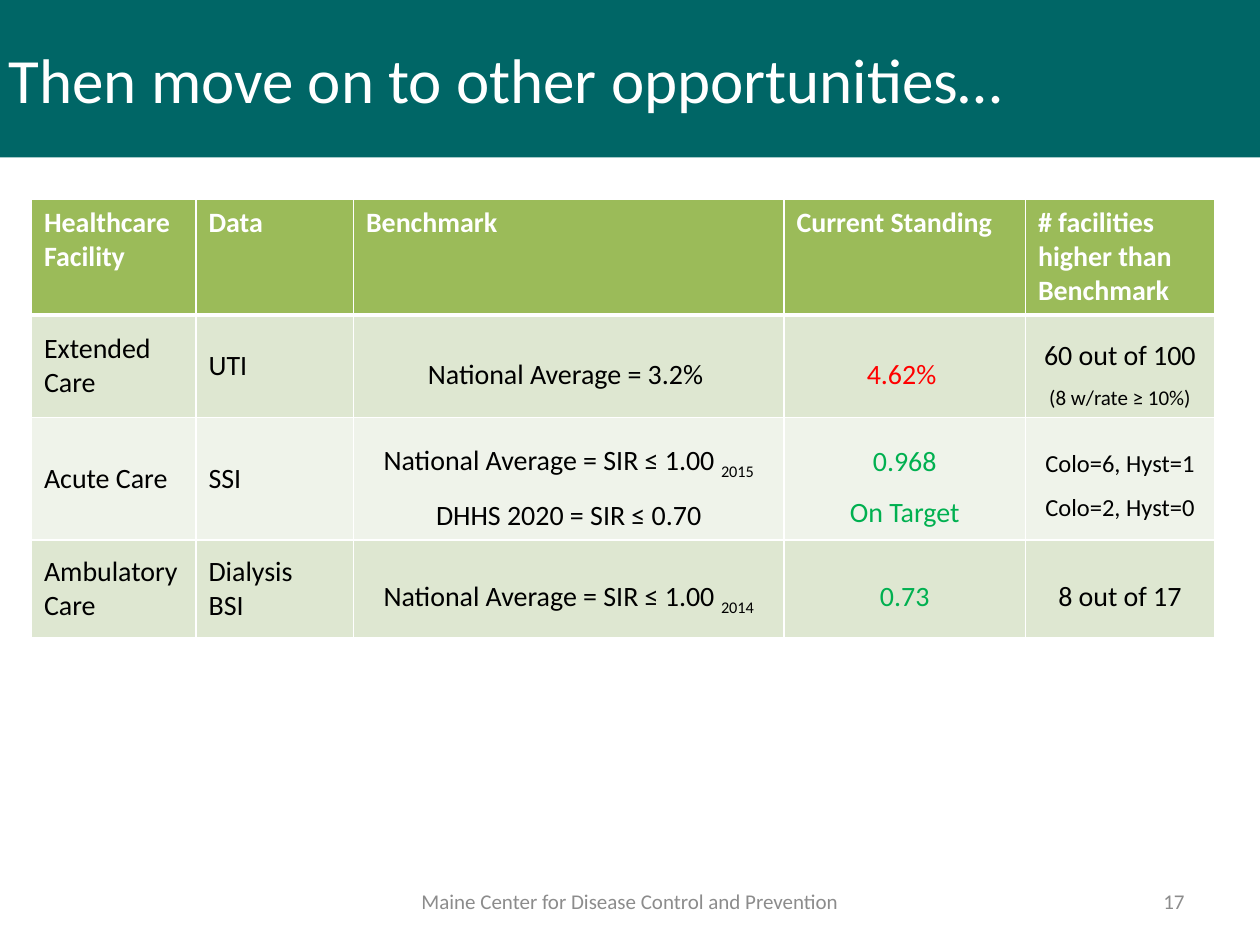
"""Build the slide on further opportunities, with its benchmark table."""
from dataclasses import dataclass

from lxml.etree import SubElement
from pptx import Presentation
from pptx.dml.color import RGBColor
from pptx.enum.shapes import MSO_SHAPE
from pptx.enum.text import MSO_ANCHOR, PP_ALIGN
from pptx.oxml.ns import qn
from pptx.util import Pt


@dataclass(frozen=True)
class Theme:
    font: str = "Calibri"
    teal: str = "006666"
    green: str = "9BBB59"
    bands: tuple = ("DEE7D1", "EFF3EA")
    white: str = "FFFFFF"
    black: str = "000000"
    gray: str = "8C8C8C"
    bad: str = "FF0000"
    good: str = "00B050"
    title: int = 36
    body: int = 16
    small: int = 14
    note: int = 12


@dataclass
class Run:
    text: str
    color: str = Theme.black
    size: int = Theme.body
    bold: bool = False
    sub: bool = False


class Deck:
    def __init__(self, theme, slide):
        self.theme = theme
        self.slide = slide

    def prose(self, frame, paras, align=PP_ALIGN.LEFT, space=1.0):
        frame.word_wrap = True
        for num, runs in enumerate(paras):
            para = frame.add_paragraph() if num else frame.paragraphs[0]
            para.alignment = align
            para.line_spacing = space
            for item in runs:
                run = para.add_run()
                run.text = item.text
                font = run.font
                font.name = self.theme.font
                font.size = Pt(item.size)
                font.bold = item.bold
                font.color.rgb = RGBColor.from_string(item.color)
                if item.sub:
                    run._r.get_or_add_rPr().set("baseline", "-25000")

    def banner(self, left, top, width, height, text):
        box = self.slide.shapes.add_shape(
            MSO_SHAPE.RECTANGLE, Pt(left), Pt(top), Pt(width), Pt(height))
        box.shadow.inherit = False
        box.fill.solid()
        box.fill.fore_color.rgb = RGBColor.from_string(self.theme.teal)
        box.line.fill.background()
        box.text_frame.vertical_anchor = MSO_ANCHOR.MIDDLE
        self.prose(box.text_frame, [[Run(text, self.theme.white, self.theme.title)]])

    def label(self, left, top, width, height, text, align):
        box = self.slide.shapes.add_textbox(Pt(left), Pt(top), Pt(width), Pt(height))
        box.text_frame.vertical_anchor = MSO_ANCHOR.MIDDLE
        self.prose(box.text_frame, [[Run(text, self.theme.gray, self.theme.note)]], align)

    def border(self, cell, sides):
        props = cell._tc.get_or_add_tcPr()
        for side, width in sides.items():
            line = SubElement(props, qn(f"a:ln{side}"), w=str(Pt(width)))
            fill = SubElement(line, qn("a:solidFill"))
            SubElement(fill, qn("a:srgbClr"), val=self.theme.white)

    def table(self, left, top, widths, heights, rows):
        grid = self.slide.shapes.add_table(
            len(rows), len(widths), Pt(left), Pt(top),
            Pt(sum(widths)), Pt(sum(heights))).table
        grid.horz_banding = False
        for col, width in zip(grid.columns, widths):
            col.width = Pt(width)
        for y, (row, height) in enumerate(zip(rows, heights)):
            grid.rows[y].height = Pt(height)
            color = self.theme.bands[(y - 1) % 2] if y else self.theme.green
            for x, paras in enumerate(row):
                cell = grid.cell(y, x)
                self.border(cell, {"L": 1, "R": 1, "T": 3 if y == 1 else 1,
                                   "B": 1 if y else 3})
                cell.fill.solid()
                cell.fill.fore_color.rgb = RGBColor.from_string(color)
                cell.vertical_anchor = MSO_ANCHOR.MIDDLE if y else MSO_ANCHOR.TOP
                mid = y > 0 and x > 1
                self.prose(cell.text_frame, paras,
                           PP_ALIGN.CENTER if mid else PP_ALIGN.LEFT,
                           1.5 if mid else 1.0)


def lines(*texts, **style):
    return [[Run(text, **style)] for text in texts]


def head(*texts):
    return lines(*texts, color=Theme.white, bold=True)


def ratio(year):
    return [Run("National Average = SIR ≤ 1.00 "), Run(year, sub=True)]


def main():
    theme = Theme()
    show = Presentation()
    show.slide_width, show.slide_height = Pt(720), Pt(540)
    deck = Deck(theme, show.slides.add_slide(show.slide_layouts[6]))
    deck.banner(-2, 0, 722, 90, "Then move on to other opportunities…")
    rows = [
        [head("Healthcare", "Facility"), head("Data"), head("Benchmark"),
         head("Current Standing"), head("# facilities", "higher than Benchmark")],
        [lines("Extended Care"), lines("UTI"), lines("National Average = 3.2% "),
         lines("4.62% ", color=theme.bad),
         lines("60 out of 100") + lines("(8 w/rate ≥ 10%)", size=theme.note)],
        [lines("Acute Care"), lines("SSI"),
         [ratio("2015")] + lines("DHHS 2020 = SIR ≤ 0.70"),
         lines("0.968", "On Target", color=theme.good),
         lines("Colo=6, Hyst=1", "Colo=2, Hyst=0", size=theme.small)],
        [lines("Ambulatory Care"), lines("Dialysis", "BSI"), [ratio("2014")],
         lines("0.73", color=theme.good), lines("8 out of 17")],
    ]
    deck.table(18, 114, [94, 90, 246, 138, 108], [66, 58, 70, 56], rows)
    deck.label(216, 500.5, 288, 29,
               "Maine Center for Disease Control and Prevention", PP_ALIGN.CENTER)
    deck.label(516, 500.5, 168, 29, "17", PP_ALIGN.RIGHT)
    show.save("out.pptx")


if __name__ == "__main__":
    main()
